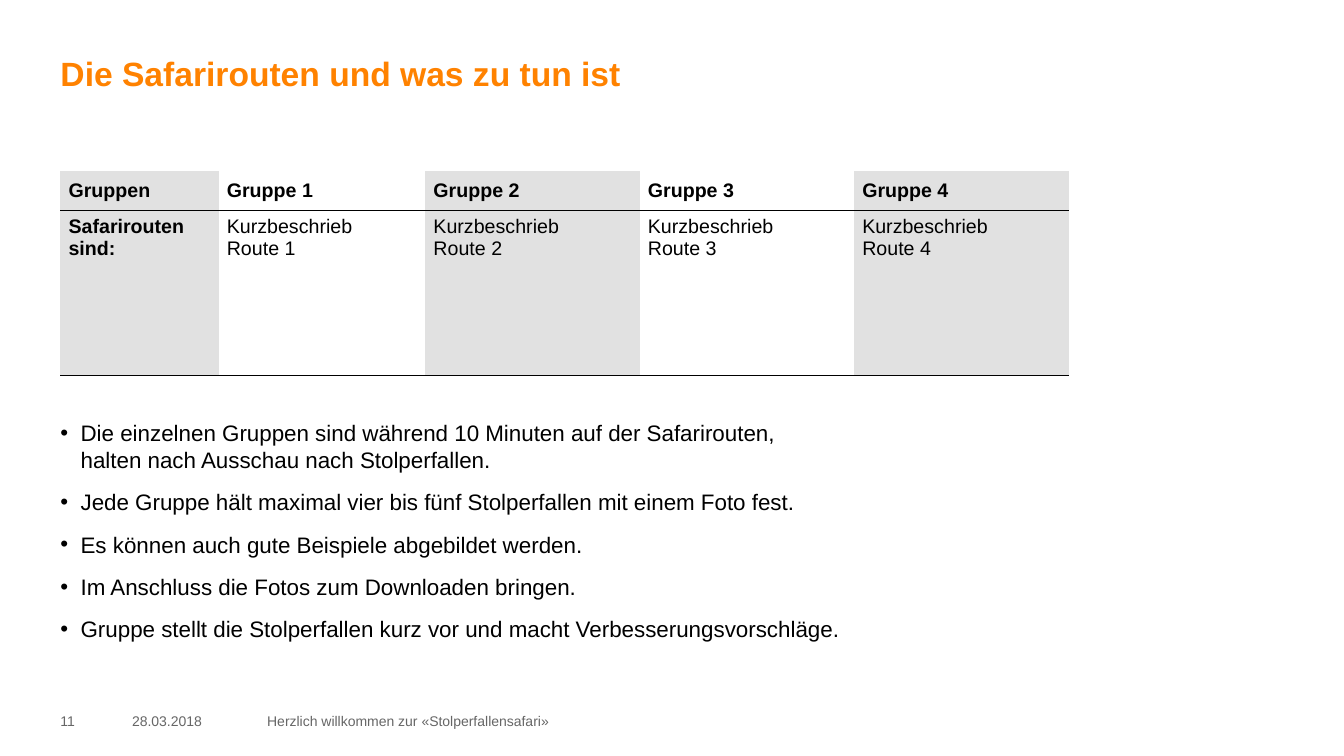
from lxml.etree import SubElement
from pptx import Presentation
from pptx.dml.color import RGBColor
from pptx.enum.text import MSO_ANCHOR, PP_ALIGN
from pptx.oxml import parse_xml
from pptx.oxml.ns import nsdecls, qn
from pptx.util import Inches, Pt

ORANGE = RGBColor(0xFF, 0x82, 0x00)
BLACK = RGBColor(0x00, 0x00, 0x00)
GREY = RGBColor(0x66, 0x66, 0x66)
PALE = RGBColor(0xE1, 0xE1, 0xE1)
PLAIN = "{2D5ABB26-0587-4C30-8999-92F81FD0307C}"

TITLE = "Die Safarirouten und was zu tun ist"
HEADS = ["Gruppen"] + [f"Gruppe {n}" for n in range(1, 5)]
ROUTES = ["Safarirouten sind:"] + [f"Kurzbeschrieb\nRoute {n}" for n in range(1, 5)]
TASKS = [
    "Die einzelnen Gruppen sind während 10 Minuten auf der Safarirouten,\v"
    "halten nach Ausschau nach Stolperfallen.",
    "Jede Gruppe hält maximal vier bis fünf Stolperfallen mit einem Foto fest.",
    "Es können auch gute Beispiele abgebildet werden.",
    "Im Anschluss die Fotos zum Downloaden bringen.",
    "Gruppe stellt die Stolperfallen kurz vor und macht Verbesserungsvorschläge.",
]
FOOT = [
    (0, 0.55, "11"),
    (0.71, 1.18, "28.03.2018"),
    (2.05, 8.58, "Herzlich willkommen zur «Stolperfallensafari»"),
]


def style(frame, size, color, bold=False):
    """Format every run in a text frame."""
    for para in frame.paragraphs:
        for run in para.runs:
            font = run.font
            font.name, font.size, font.bold = "Arial", Pt(size), bold
            font.color.rgb = color


def setup(frame, anchor):
    """Wrap a text frame and clear its margins."""
    frame.word_wrap = True
    frame.vertical_anchor = anchor
    frame.margin_left = frame.margin_right = 0
    frame.margin_top = frame.margin_bottom = 0


def add_box(slide, left, top, width, height, anchor=MSO_ANCHOR.TOP):
    """Add a text box without margins and return its frame."""
    box = slide.shapes.add_textbox(
        Inches(left), Inches(top), Inches(width), Inches(height))
    setup(box.text_frame, anchor)
    return box.text_frame


def add_title(slide, left, top, width, height):
    """Place and format the title."""
    title = slide.shapes.title
    title.left, title.top = Inches(left), Inches(top)
    title.width, title.height = Inches(width), Inches(height)
    frame = title.text_frame
    setup(frame, MSO_ANCHOR.TOP)
    frame.text = TITLE
    frame.paragraphs[0].alignment = PP_ALIGN.LEFT
    style(frame, 24, ORANGE, True)


def add_rule(cell, side, width):
    """Draw a black border on one side of a cell."""
    line = parse_xml(
        f'<a:{side} {nsdecls("a")} w="{Pt(width)}"><a:solidFill>'
        f'<a:srgbClr val="{BLACK}"/></a:solidFill></a:{side}>')
    cell._tc.get_or_add_tcPr().append(line)


def fill_cell(cell, text, row, col):
    """Write one cell with its rules, fill and text."""
    if row:
        add_rule(cell, "lnT", 0.17)
    add_rule(cell, "lnB", 0.17 if row else 0.67)
    if col % 2:
        cell.fill.background()
    else:
        cell.fill.solid()
        cell.fill.fore_color.rgb = PALE
    cell.margin_left = cell.margin_right = Inches(0.08)
    cell.margin_top = cell.margin_bottom = Inches(0.05)
    cell.vertical_anchor = MSO_ANCHOR.TOP if row else MSO_ANCHOR.MIDDLE
    cell.text_frame.text = text
    style(cell.text_frame, 14, BLACK, row == 0 or col == 0)


def add_routes(slide, left, top, width, height):
    """Add the table of groups and routes."""
    table = slide.shapes.add_table(
        2, 5, Inches(left), Inches(top), Inches(width), Inches(height)).table
    table.first_row = table.horz_banding = False
    table._tbl.tblPr.find(qn("a:tableStyleId")).text = PLAIN
    first, second, head = 1.57, 2.05, 0.39
    rest = (width - first - second) / 3
    for col, size in zip(table.columns, [first, second] + [rest] * 3):
        col.width = Inches(size)
    for row, size in zip(table.rows, [head, height - head]):
        row.height = Inches(size)
    for row, texts in enumerate([HEADS, ROUTES]):
        for col, text in enumerate(texts):
            fill_cell(table.cell(row, col), text, row, col)


def add_tasks(slide, left, top, width, height):
    """Add the bulleted list of tasks."""
    frame = add_box(slide, left, top, width, height)
    for num, task in enumerate(TASKS):
        para = frame.add_paragraph() if num else frame.paragraphs[0]
        para.text = task
        props = para._p.get_or_add_pPr()
        props.set("marL", str(Inches(0.2)))
        props.set("indent", str(-Inches(0.2)))
        SubElement(props, qn("a:buFont")).set("typeface", "Arial")
        SubElement(props, qn("a:buChar")).set("char", "•")
        if num:
            para.space_before = Pt(11)
    style(frame, 16, BLACK)


def add_foot(slide, left, top, height):
    """Add the page number, date and footer text."""
    for shift, width, text in FOOT:
        frame = add_box(slide, left + shift, top, width, height, MSO_ANCHOR.MIDDLE)
        frame.text = text
        style(frame, 10, GREY)


def main():
    """Build and save the slide."""
    deck = Presentation()
    deck.slide_width, deck.slide_height = Inches(13.33), Inches(7.5)
    slide = deck.slides.add_slide(deck.slide_layouts[5])
    add_title(slide, 0.6, 0.52, 12.13, 0.94)
    add_routes(slide, 0.6, 1.7, 10, 2.02)
    add_tasks(slide, 0.6, 4.16, 10, 2.6)
    add_foot(slide, 0.6, 7.05, 0.2)
    deck.save("out.pptx")


if __name__ == "__main__":
    main()
